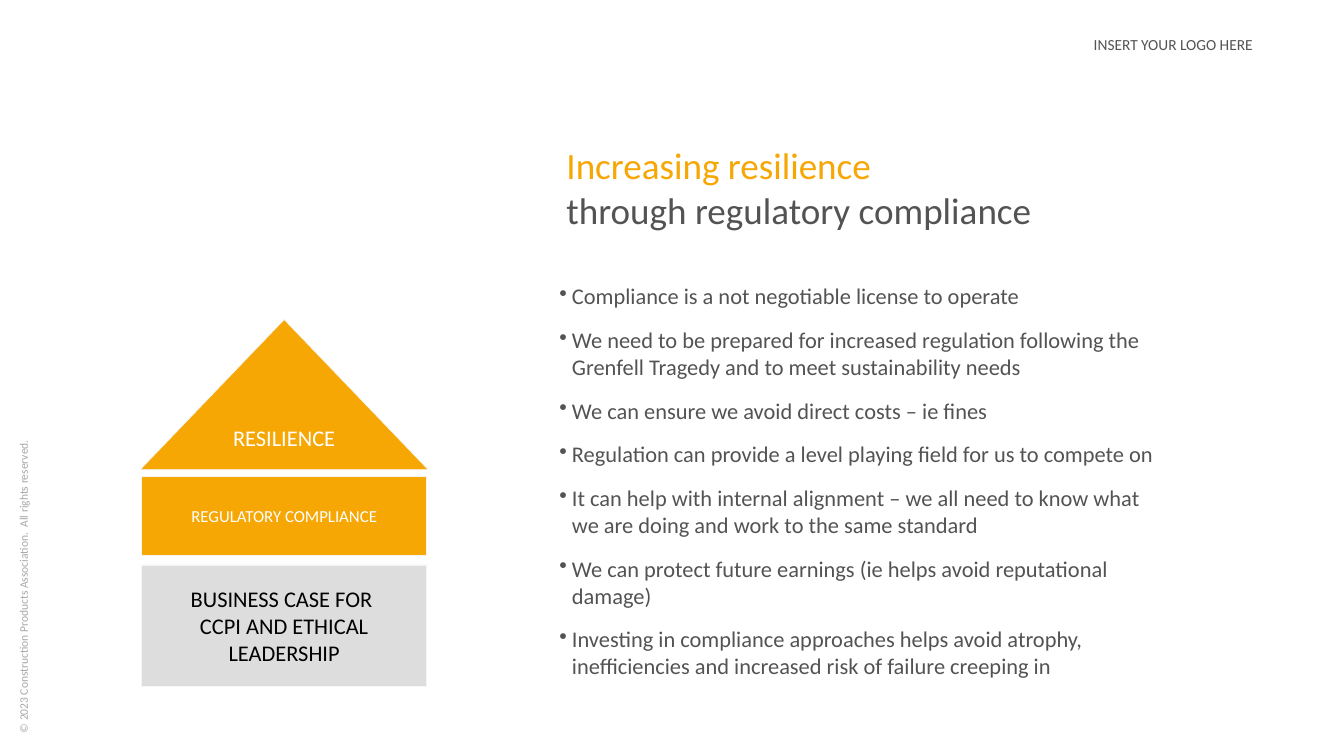
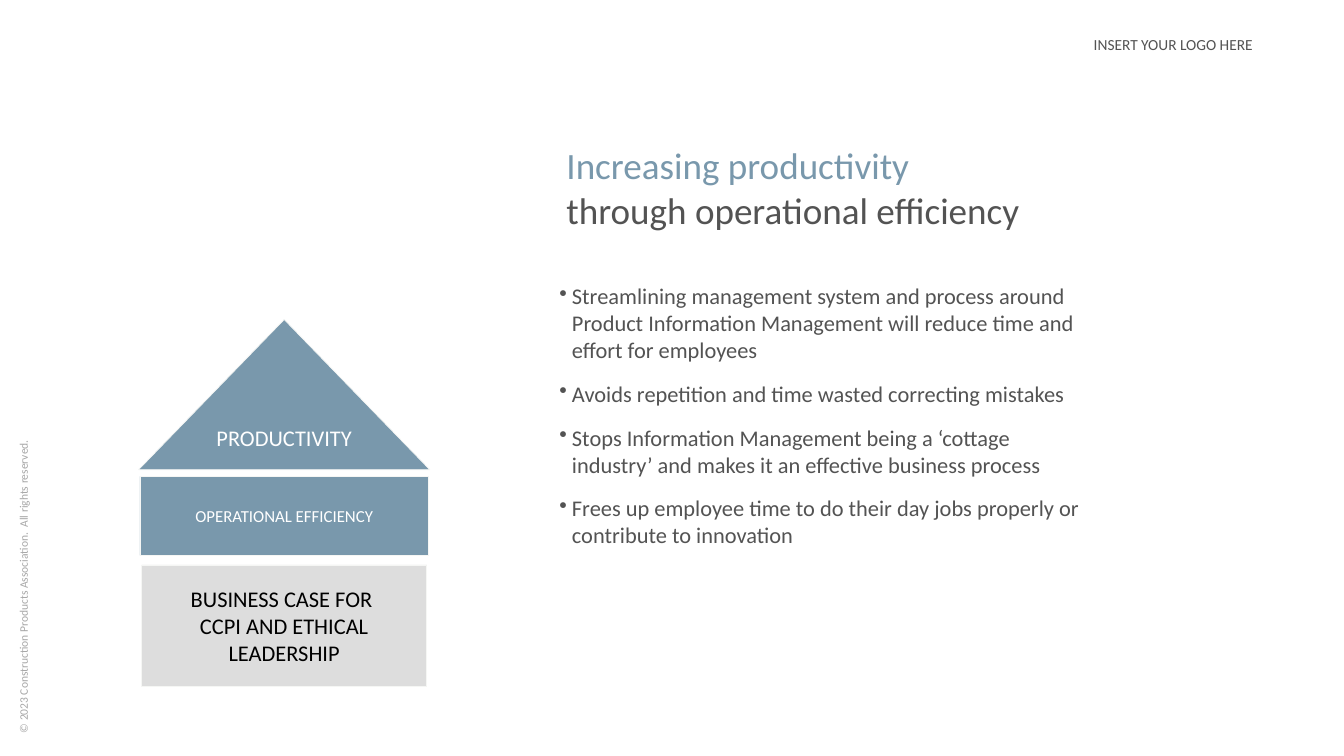
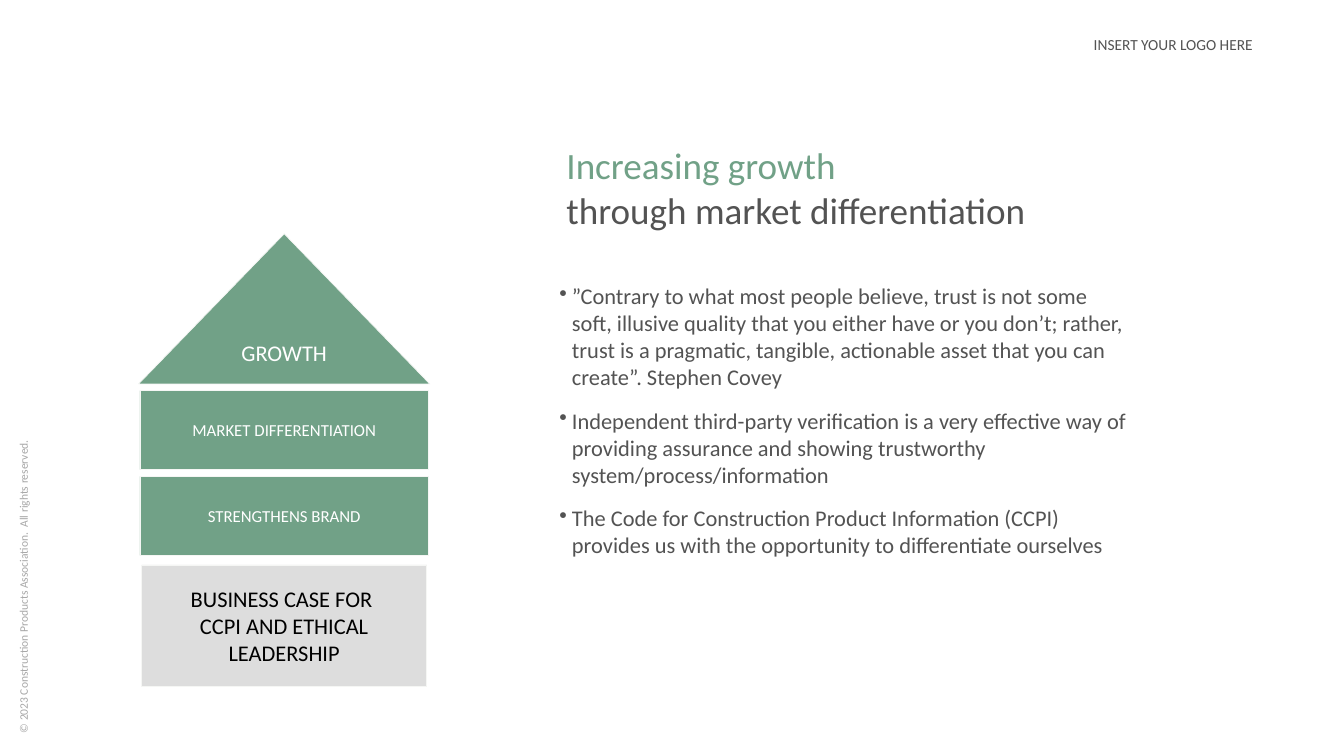
from lxml.etree import SubElement
from pptx import Presentation
from pptx.dml.color import RGBColor
from pptx.enum.shapes import MSO_SHAPE
from pptx.enum.text import MSO_ANCHOR, MSO_AUTO_SIZE, PP_ALIGN
from pptx.oxml.ns import qn
from pptx.util import Pt

# Content
COPYRIGHT = "© 2023 Construction Products Association.  All rights reserved."
LOGO_NOTE = "INSERT YOUR LOGO HERE"
BASE_TEXT = "BUSINESS CASE FOR \nCCPI AND ETHICAL LEADERSHIP"

SLIDES = [
    {
        "title": "Increasing resilience\nthrough regulatory compliance",
        "accent": "F6A704",
        "roof": "RESILIENCE",
        "blocks": ["REGULATORY COMPLIANCE"],
        "house_width": 407.5,
        "body_size": (889, 565),
        "bullets": [
            "Compliance is a not negotiable license to operate",
            "We need to be prepared for increased regulation following the "
            "Grenfell Tragedy and to meet sustainability needs",
            "We can ensure we avoid direct costs – ie fines",
            "Regulation can provide a level playing field for us to compete on",
            "It can help with internal alignment – we all need to know what "
            "we are doing and work to the same standard",
            "We can protect future earnings (ie helps avoid reputational damage)",
            "Investing in compliance approaches helps avoid atrophy,\n"
            "inefficiencies and increased risk of failure creeping in",
        ],
    },
    {
        "title": "Increasing productivity\nthrough operational efficiency",
        "accent": "7998AC",
        "roof": "PRODUCTIVITY",
        "blocks": ["OPERATIONAL EFFICIENCY"],
        "house_width": 412,
        "body_size": (778, 382),
        "bullets": [
            "Streamlining management system and process around Product "
            "Information Management will reduce time and effort for employees",
            "Avoids repetition and time wasted correcting mistakes",
            "Stops Information Management being a ‘cottage industry’ and makes "
            "it an effective business process",
            "Frees up employee time to do their day jobs properly or "
            "contribute to innovation",
        ],
    },
    {
        "title": "Increasing growth\nthrough market differentiation",
        "accent": "71A187",
        "roof": "GROWTH",
        "blocks": ["MARKET DIFFERENTIATION", "STRENGTHENS BRAND"],
        "house_width": 412,
        "body_size": (829, 395),
        "bullets": [
            "”Contrary to what most people believe, trust is not some soft, "
            "illusive quality that you either have or you don’t; rather, trust "
            "is a pragmatic, tangible, actionable asset that you can create”. "
            "Stephen Covey",
            "Independent third-party verification is a very effective way of "
            "providing assurance and showing trustworthy "
            "system/process/information",
            "The Code for Construction Product Information (CCPI) provides us "
            "with the opportunity to differentiate ourselves",
        ],
    },
]

# Shared style
FONT = "Calibri"
INK, MUTED, WHITE, BLACK = "535353", "A7A7A7", "FFFFFF", "000000"
BASE_FILL, EDGE = "DDDDDD", "F5F6F4"

# House geometry, in points
CENTRE_X = 406
BASE_TOP, BASE_W, BASE_H = 807, 407.5, 173.5
BLOCK_TOP, BLOCK_H, BLOCK_STEP = 680.5, 113, 122.5
ROOF_RISE, ROOF_H, ROOF_OVERHANG = 224, 214.5, 2
ROOF_LABEL_W, ROOF_LABEL_DROP, LABEL_H = 208, 146, 46


def rgb(value):
    return RGBColor.from_string(value)


def set_all(obj, values):
    for name, value in values.items():
        setattr(obj, name, value)


def write(sp, texts, size, colours, align=PP_ALIGN.LEFT, inset=7.2,
          anchor=MSO_ANCHOR.TOP, fit=MSO_AUTO_SIZE.NONE, bullet=None):
    """Fill a shape with paragraphs; colours follow the lines of each one."""
    tf = sp.text_frame
    set_all(tf, {"word_wrap": True, "auto_size": fit, "vertical_anchor": anchor})
    set_all(tf, {"margin_" + side: Pt(inset)
                 for side in ("left", "top", "right", "bottom")})
    for i, text in enumerate(texts):
        p = tf.add_paragraph() if i else tf.paragraphs[0]
        p.text = text
        set_all(p, {"alignment": align, "line_spacing": 1.0,
                    "space_before": Pt(24 if i else 0)})
        if bullet:
            pPr = p._p.get_or_add_pPr()
            pPr.set("marL", str(Pt(18)))
            pPr.set("indent", str(Pt(-18)))
            SubElement(pPr, qn("a:buChar")).set("char", bullet)
        for j, r in enumerate(p.runs):
            set_all(r.font, {"name": FONT, "size": Pt(size), "bold": False})
            r.font.color.rgb = rgb(colours[min(j, len(colours) - 1)])


def add_text(s, box, texts, size, colour, **style):
    sp = s.shapes.add_textbox(*map(Pt, box))
    write(sp, texts, size, [colour], **style)
    return sp


def add_label(s, box, text, size, colour):
    add_text(s, box, [text], size, colour, align=PP_ALIGN.CENTER,
             inset=3.6, anchor=MSO_ANCHOR.MIDDLE)


def add_part(s, kind, top, width, height, fill):
    """Add one part of the house, centred on its axis."""
    sp = s.shapes.add_shape(kind, Pt(CENTRE_X - width / 2), Pt(top),
                            Pt(width), Pt(height))
    sp.shadow.inherit = False
    sp.fill.solid()
    sp.fill.fore_color.rgb = rgb(fill)
    sp.line.color.rgb = rgb(EDGE)
    sp.line.width = Pt(1)


def add_house(s, data):
    width, accent = data["house_width"], data["accent"]
    left = CENTRE_X - width / 2

    # Base
    add_part(s, MSO_SHAPE.RECTANGLE, BASE_TOP, BASE_W, BASE_H, BASE_FILL)
    add_label(s, (CENTRE_X - BASE_W / 2, BASE_TOP + 3, BASE_W, BASE_H - 6),
              BASE_TEXT, 32, BLACK)

    # Blocks, stacked upwards from the base
    first_top = BLOCK_TOP - (len(data["blocks"]) - 1) * BLOCK_STEP
    for i, text in enumerate(data["blocks"]):
        top = first_top + i * BLOCK_STEP
        add_part(s, MSO_SHAPE.RECTANGLE, top, width, BLOCK_H, accent)
        add_label(s, (left, top + (BLOCK_H - LABEL_H) / 2, width, LABEL_H),
                  text, 24, WHITE)

    # Roof
    top = first_top - ROOF_RISE
    add_part(s, MSO_SHAPE.ISOSCELES_TRIANGLE, top, width + 2 * ROOF_OVERHANG,
             ROOF_H, accent)
    add_label(s, (CENTRE_X - ROOF_LABEL_W / 2, top + ROOF_LABEL_DROP,
                  ROOF_LABEL_W, LABEL_H), data["roof"], 32, WHITE)


def add_frame(s):
    """Add the copyright line and logo note found on every slide."""
    sp = add_text(s, (-459.5, 546, 984, 33), [COPYRIGHT], 16.5, MUTED,
                  fit=MSO_AUTO_SIZE.SHAPE_TO_FIT_TEXT)
    sp.rotation = 270
    add_text(s, (1480, 46, 392, 65.5), [LOGO_NOTE], 22, INK,
             align=PP_ALIGN.CENTER, inset=3.6)


def build_slide(prs, data):
    s = prs.slides.add_slide(prs.slide_layouts[5])
    add_frame(s)

    # Title
    title = s.shapes.title
    set_all(title, {"left": Pt(802), "top": Pt(196.5),
                    "width": Pt(988.5), "height": Pt(138)})
    write(title, [data["title"]], 53, [data["accent"], INK])

    # Bullets
    add_text(s, (792, 396.5, *data["body_size"]), data["bullets"], 32, INK,
             fit=MSO_AUTO_SIZE.SHAPE_TO_FIT_TEXT, bullet="•")
    add_house(s, data)


def main():
    prs = Presentation()
    set_all(prs, {"slide_width": Pt(1920), "slide_height": Pt(1080)})
    for data in SLIDES:
        build_slide(prs, data)
    prs.save("out.pptx")


if __name__ == "__main__":
    main()
